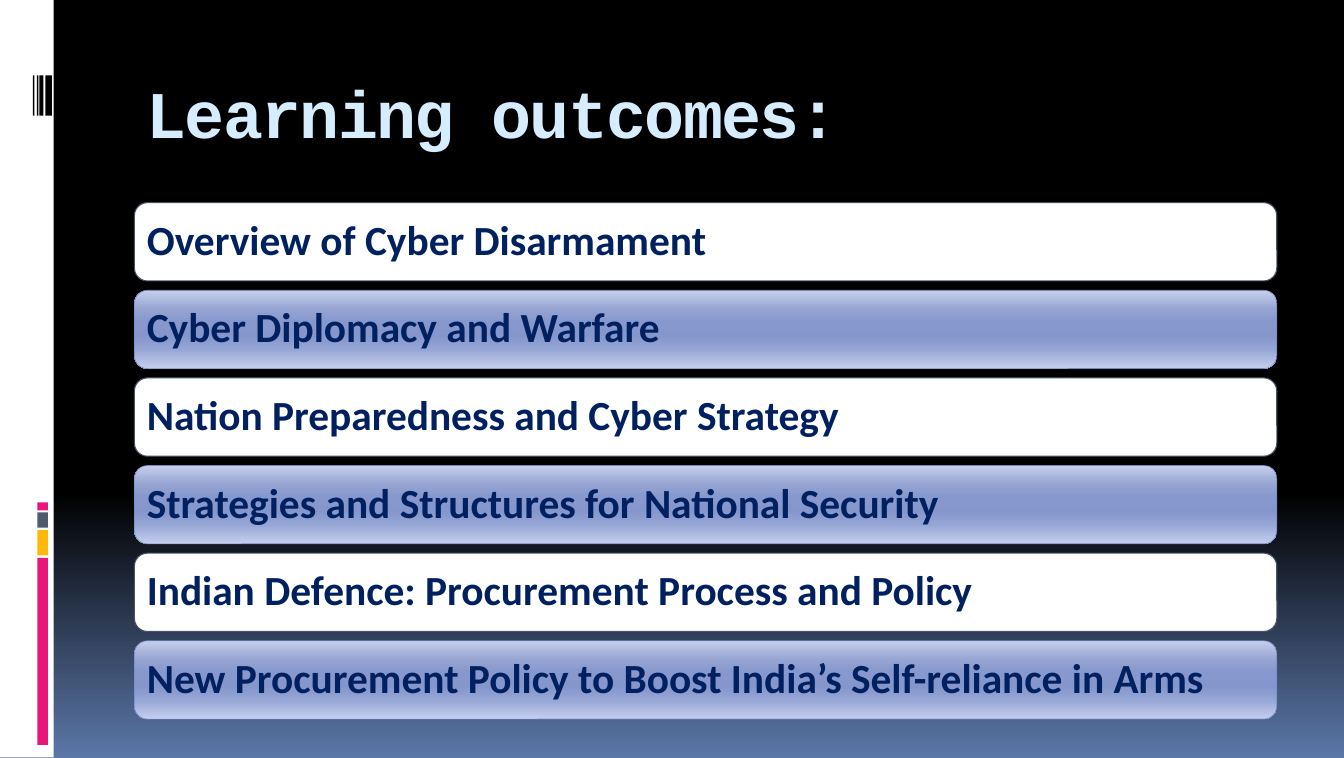
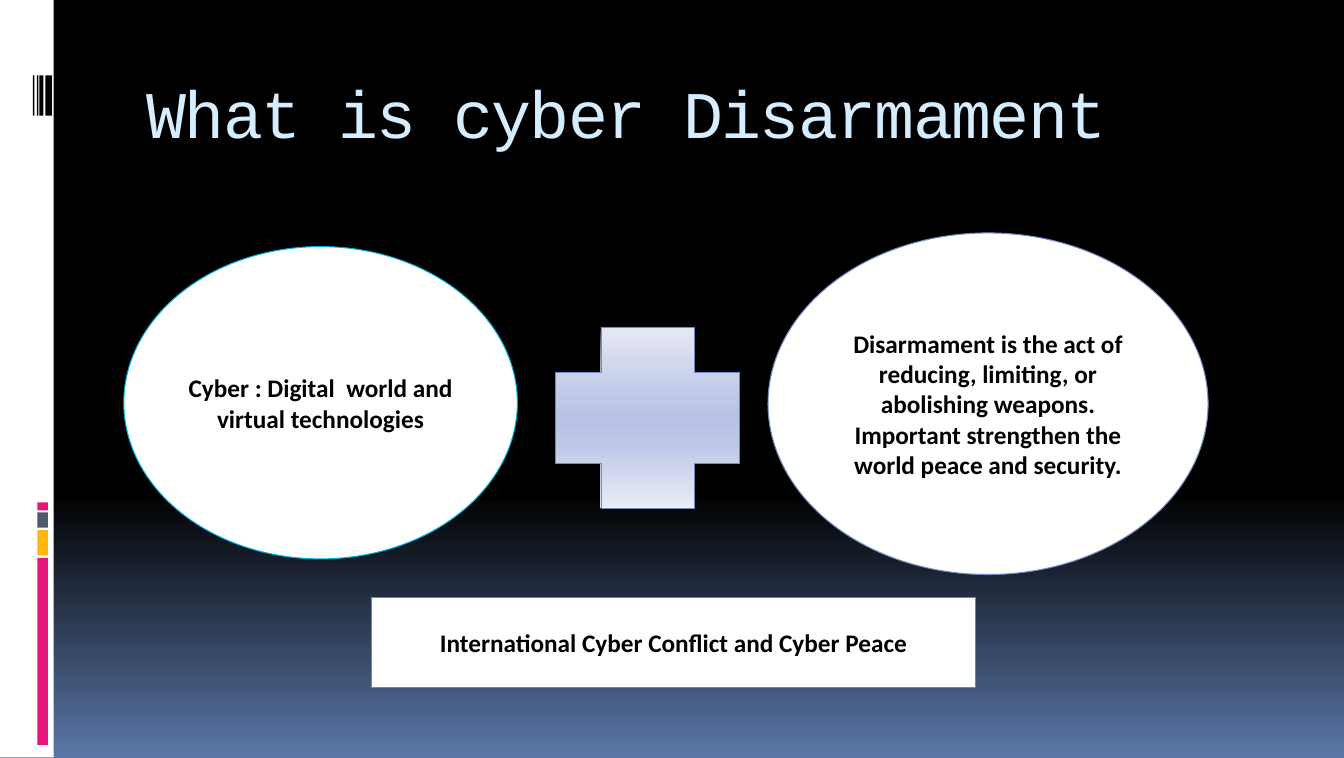
import pptx
import pptx.util
import pptx.dml.color
import pptx.enum.shapes
import pptx.enum.text
import pptx.oxml.ns
from lxml import etree

Inches = pptx.util.Inches
Pt = pptx.util.Pt
SHAPE = pptx.enum.shapes.MSO_SHAPE
ALIGN = pptx.enum.text.PP_ALIGN
ANCHOR = pptx.enum.text.MSO_ANCHOR
qn = pptx.oxml.ns.qn

HUES = {
    "white": "FFFFFF", "black": "000000", "pink": "EA157A", "gold": "FEB80A",
    "slate": "4E5B6F", "edge": "475365", "title": "D6ECFF", "navy": "002060",
    "cyan": "00ADDC", "blue": "738AC8", "green": "1AB39F",
}
NIGHT = [(0, "000000"), (65, "000000"), (100, "5B77A8")]
STEEL = [(0, "C7CFEC"), (25, "94A3D1"), (40, "8698CD"), (50, "8496CC"),
         (60, "8698CD"), (75, "95A5D5"), (100, "C5CEED")]
PEARL = [(0, "E5E8F4"), (40, "BEC7E8"), (50, "B8C2E6"), (65, "BEC7E8"),
         (100, "EAEDF6")]

TOPICS = [
    "Overview of Cyber Disarmament",
    "Cyber Diplomacy and Warfare",
    "Nation Preparedness and Cyber Strategy",
    "Strategies and Structures for National Security",
    "Indian Defence: Procurement Process and Policy",
    "New Procurement Policy to Boost India’s Self-reliance in Arms",
]
LEFT, WIDTH = 2.66, 22.61


def color(name):
    return pptx.dml.color.RGBColor.from_string(HUES[name])


def shade(fill, owner, stops):
    """Fill from top to bottom with stops of (percent, hex)."""
    fill.gradient()
    fill.gradient_angle = 270
    ramp = owner.element.find(".//" + qn("a:gsLst"))
    ramp.clear()
    for spot, tint in stops:
        stop = etree.SubElement(ramp, qn("a:gs"), pos=str(spot * 1000))
        etree.SubElement(stop, qn("a:srgbClr"), val=tint)


def draw(slide, kind, box, fill, line=None, weight=1.5):
    """Add a shape; fill is a colour name or a list of gradient stops."""
    shape = slide.shapes.add_shape(kind, *map(Inches, box))
    shape.shadow.inherit = False
    if isinstance(fill, list):
        shade(shape.fill, shape, fill)
    else:
        shape.fill.solid()
        shape.fill.fore_color.rgb = color(fill)
    if line:
        shape.line.color.rgb = color(line)
        shape.line.width = Pt(weight)
    else:
        shape.line.fill.background()
    return shape


def write(shape, text, size=36, font="Calibri", hue="black", bold=True,
          align=ALIGN.CENTER, anchor=ANCHOR.MIDDLE, pad=(0.1, 0.05),
          leading=None, track=None):
    frame = shape.text_frame
    frame.word_wrap = True
    frame.vertical_anchor = anchor
    frame.margin_left = frame.margin_right = Inches(pad[0])
    frame.margin_top = frame.margin_bottom = Inches(pad[1])
    para = frame.paragraphs[0]
    para.alignment = align
    if leading:
        para.line_spacing = leading
    run = para.add_run()
    run.text = text
    run.font.size = Pt(size)
    run.font.name = font
    run.font.bold = bold
    run.font.color.rgb = color(hue)
    if track:
        run.font._element.set("spc", str(round(track * 100)))


def begin(deck, title, bold):
    """Add a slide with the shared background, side band and title."""
    slide = deck.slides.add_slide(deck.slide_layouts[6])
    shade(slide.background.fill, slide, NIGHT)
    draw(slide, SHAPE.RECTANGLE, (0, 0, 1.06, 14.99), "white")
    for top, height, hue in [(11.04, 3.7, "pink"), (10.49, 0.5, "gold"),
                             (10.14, 0.3, "slate"), (9.94, 0.16, "pink")]:
        draw(slide, SHAPE.RECTANGLE, (0.74, top, 0.21, height), hue)
    for left, width in [(0.9, 0.13), (0.78, 0.08), (0.73, 0.03), (0.65, 0.03)]:
        draw(slide, SHAPE.RECTANGLE, (left, 1.49, width, 0.8), "black")
    head = slide.shapes.add_textbox(*map(Inches, (LEFT, 1.12, WIDTH, 2)))
    write(head, title, size=95, font="Courier New", hue="title", bold=bold,
          align=ALIGN.LEFT, anchor=ANCHOR.BOTTOM, pad=(0.24, 0.12), track=-2.4)
    return slide


def topics(deck):
    slide = begin(deck, "Learning outcomes:", True)
    for row, text in enumerate(TOPICS):
        fill, line, weight = ((STEEL, "blue", 0.94) if row % 2
                              else ("white", "edge", 1.5))
        box = (LEFT, 4.01 + row * 1.734, WIDTH, 1.55)
        bar = draw(slide, SHAPE.ROUNDED_RECTANGLE, box, fill, line, weight)
        write(bar, text, size=59, hue="navy", align=ALIGN.LEFT,
              pad=(0.17, 0.17), leading=0.9)


def meaning(deck):
    slide = begin(deck, "What is cyber Disarmament", False)
    for kind, box, line, text in [
        (SHAPE.OVAL, (2.45, 4.88, 7.79, 6.18), "cyan",
         "Cyber : Digital  world and virtual technologies"),
        (SHAPE.OVAL, (15.2, 4.61, 8.71, 6.76), "blue",
         "Disarmament is the act of reducing, limiting, or abolishing weapons. "
         "Important strengthen the world peace and security."),
        (SHAPE.RECTANGLE, (7.36, 11.82, 11.94, 1.79), "green",
         "International Cyber Conflict and Cyber Peace"),
    ]:
        write(draw(slide, kind, box, "white", line), text)
    draw(slide, SHAPE.CROSS, (11, 6.48, 3.64, 3.58), PEARL, "blue", 0.94)


def main():
    deck = pptx.Presentation()
    deck.slide_width = Inches(26.6)
    deck.slide_height = Inches(15)
    topics(deck)
    meaning(deck)
    deck.save("out.pptx")


if __name__ == "__main__":
    main()
